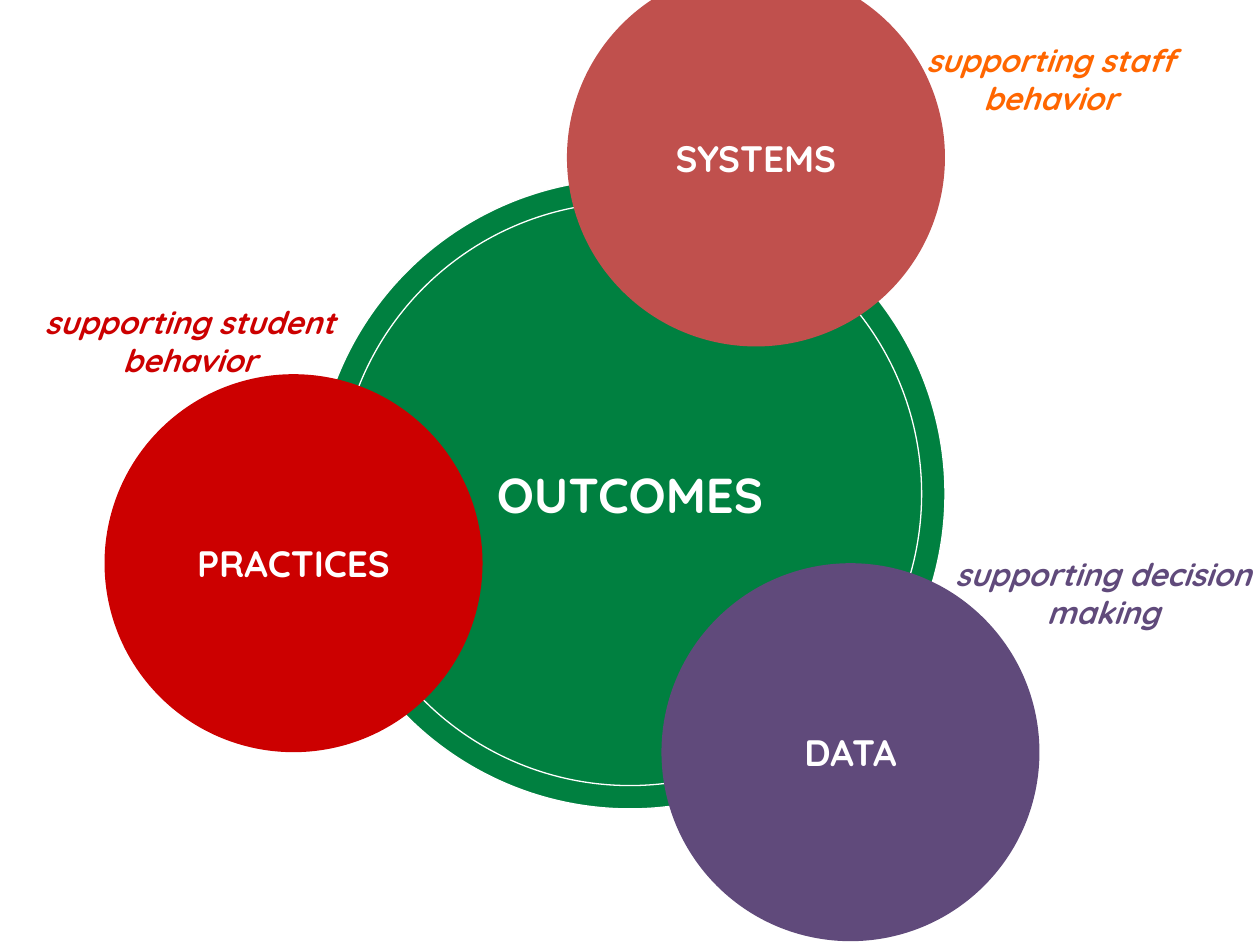
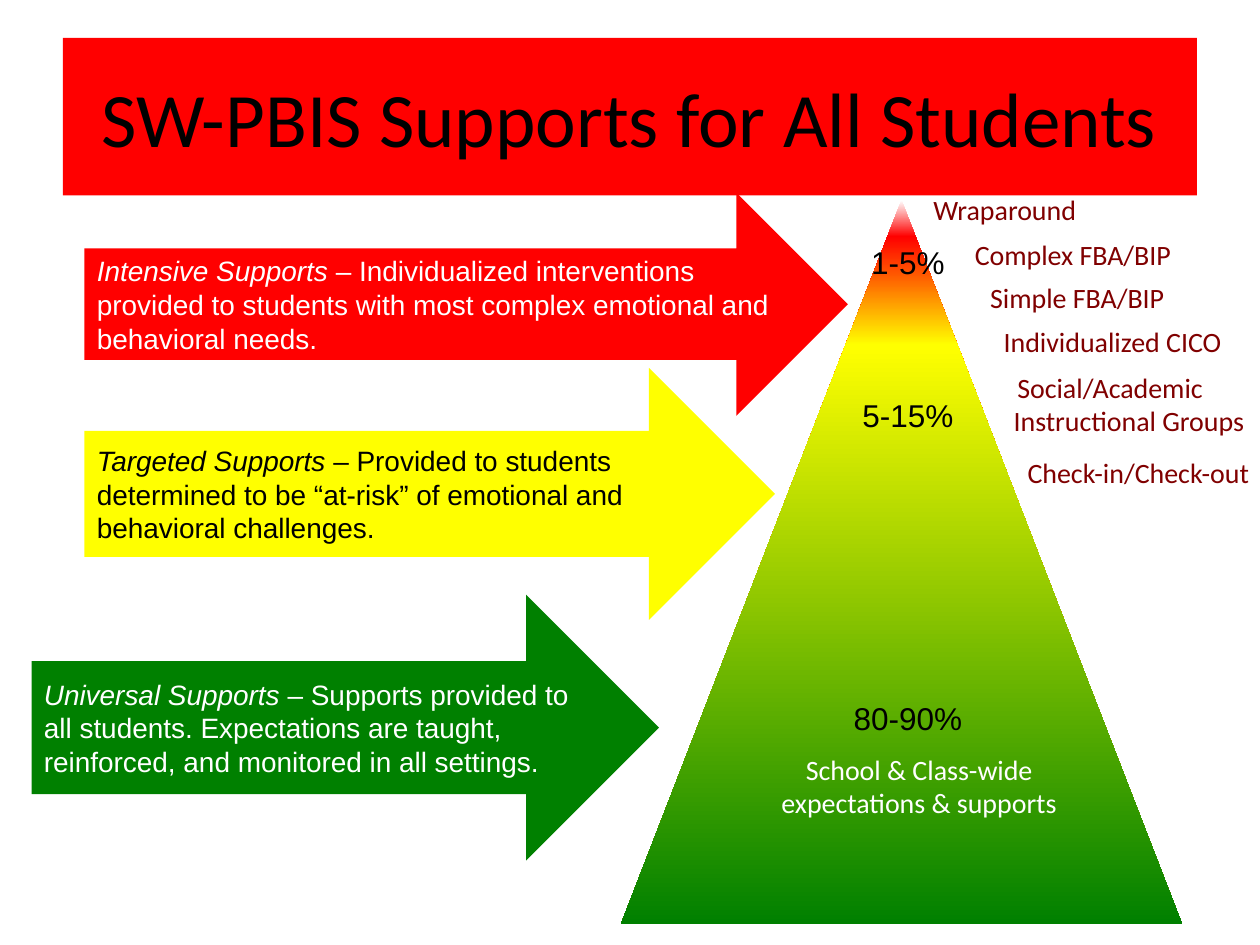
from dataclasses import dataclass

from lxml import etree
from pptx import Presentation
from pptx import util as u
from pptx.dml.color import RGBColor
from pptx.enum import shapes, text
from pptx.oxml.ns import qn


@dataclass(frozen=True)
class Theme:
    white: str = "FFFFFF"
    black: str = "000000"
    red: str = "FF0000"
    yellow: str = "FFFF00"
    green: str = "008000"
    maroon: str = "800000"
    outcomes: str = "008040"
    data: str = "604A7B"
    systems: str = "C0504D"
    staff: str = "FF6600"
    practices: str = "CC0000"
    circle_font: str = "Quicksand"
    tier_font: str = "Arial"
    label_font: str = "Calibri"
    title_size: int = 44
    core_size: int = 28
    circle_size: int = 21
    note_size: int = 18
    label_size: int = 16


THEME = Theme()
SHAPE = shapes.MSO_SHAPE
CENTER, LEFT = text.PP_ALIGN.CENTER, text.PP_ALIGN.LEFT
MIDDLE, TOP = text.MSO_ANCHOR.MIDDLE, text.MSO_ANCHOR.TOP


# Text helpers
def style(font, size, name, color, **flags):
    values = {"size": u.Pt(size), "name": name, **flags}
    for key, value in values.items():
        setattr(font, key, value)
    font.color.rgb = RGBColor.from_string(color)


def add_span(para, words, size, name, color, **flags):
    span = para.add_run()
    span.text = words
    style(span.font, size, name, color, **flags)


def set_frame(frame, anchor=MIDDLE, wrap=True, inset=None):
    values = {"word_wrap": wrap, "vertical_anchor": anchor}
    if inset is not None:
        for side in ("left", "top", "right", "bottom"):
            values[f"margin_{side}"] = u.Inches(inset)
    for key, value in values.items():
        setattr(frame, key, value)


def add_label(page, at, lines, size, name, color, anchor=TOP, wrap=True, gaps=(), **flags):
    """Add a centred text box; gaps holds the space before each later line."""
    box = page.shapes.add_textbox(*map(u.Inches, at))
    frame = box.text_frame
    set_frame(frame, anchor, wrap)
    for index, line in enumerate(lines):
        para = frame.add_paragraph() if index else frame.paragraphs[0]
        para.alignment = CENTER
        if index and gaps:
            para.space_before = u.Pt(gaps[index - 1])
        add_span(para, line, size, name, color, **flags)
    return box


# Shape helpers
def add_figure(parent, kind, at, fill=None, line=None):
    figure = parent.shapes.add_shape(kind, *map(u.Inches, at))
    figure.shadow.inherit = False
    if fill:
        figure.fill.solid()
        figure.fill.fore_color.rgb = RGBColor.from_string(fill)
    else:
        figure.fill.background()
    if line:
        figure.line.color.rgb = RGBColor.from_string(line)
        figure.line.width = u.Pt(0.75)
    else:
        figure.line.fill.background()
    return figure


def add_circle(parent, center, diameter, fill, words="", size=0, line=None, inset=None):
    left, top = (c - diameter / 2 for c in center)
    circle = add_figure(parent, SHAPE.OVAL, (left, top, diameter, diameter), fill, line)
    if words:
        set_frame(circle.text_frame, inset=inset)
        para = circle.text_frame.paragraphs[0]
        para.alignment = CENTER
        add_span(para, words, size, THEME.circle_font, THEME.white, bold=True)


def add_title(page, words):
    band = add_figure(page, SHAPE.RECTANGLE, (0.5, 0.3, 9, 1.25), THEME.red)
    set_frame(band.text_frame)
    para = band.text_frame.paragraphs[0]
    para.alignment = CENTER
    add_span(para, words, THEME.title_size, THEME.label_font, THEME.black)


def add_tier_arrow(page, at, fill, color, tier, description):
    arrow = add_figure(page, SHAPE.RIGHT_ARROW, at, fill)
    set_frame(arrow.text_frame)
    para = arrow.text_frame.paragraphs[0]
    para.alignment = LEFT
    for words, italic in ((f"{tier} ", True), (f"– {description}", False)):
        add_span(para, words, THEME.label_size, THEME.tier_font, color, italic=italic)


def add_pyramid(page, at, stops):
    pyramid = add_figure(page, SHAPE.ISOSCELES_TRIANGLE, at)
    pyramid.fill.gradient()
    pyramid.fill.gradient_angle = 270
    stop_list = pyramid._element.spPr.find(f".//{qn('a:gsLst')}")
    for old_stop in list(stop_list):
        stop_list.remove(old_stop)
    for percent, color in stops:
        stop = etree.SubElement(stop_list, qn("a:gs"), pos=str(percent * 1000))
        etree.SubElement(stop, qn("a:srgbClr"), val=color)


# Slides
def build_outcomes(page):
    core = page.shapes.add_group_shape()
    center = (5, 3.92)
    add_circle(core, center, 5, THEME.outcomes, "OUTCOMES", THEME.core_size, THEME.white)
    add_circle(core, center, 4.63, None, line=THEME.white)

    # Surrounding circles
    for words, middle, fill in (
        ("DATA", (6.75, 5.97), THEME.data),
        ("SYSTEMS", (6, 1.25), THEME.systems),
        ("PRACTICES", (2.33, 4.47), THEME.practices),
    ):
        add_circle(page, middle, 3, fill, words, THEME.circle_size, inset=0)

    # What each circle supports
    for target, left, top, color in (
        ("student behavior", -0.08, 2.33, THEME.practices),
        ("staff behavior", 6.75, 0.25, THEME.staff),
        ("decision making", 7.17, 4.33, THEME.data),
    ):
        add_label(page, (left, top, 3.17, 0.75), [f"supporting {target}"], THEME.note_size,
                  THEME.circle_font, color, MIDDLE, bold=True, italic=True)


def build_supports(page):
    add_title(page, "SW-PBIS Supports for All Students")

    # Pyramid and its shares of students
    add_pyramid(page, (4.93, 1.59, 4.45, 5.74),
                ((0, THEME.white), (5, THEME.red), (20, THEME.yellow), (100, THEME.green)))
    add_label(page, (6.58, 1.88, 1.25, 4.04), ["1-5%", "5-15%", "80-90%"], THEME.note_size,
              THEME.tier_font, THEME.black, gaps=(65.6, 152))

    # Tiers of support
    add_tier_arrow(page, (0.67, 2.92, 5.48, 2), THEME.yellow, THEME.black, "Targeted Supports",
                   "Provided to students determined to be “at-risk” of emotional and "
                   "behavioral challenges.")
    add_tier_arrow(page, (0.67, 1.53, 6.06, 1.77), THEME.red, THEME.white, "Intensive Supports",
                   "Individualized interventions provided to students with most complex "
                   "emotional and behavioral needs.")
    add_tier_arrow(page, (0.25, 4.72, 4.98, 2.11), THEME.green, THEME.white, "Universal Supports",
                   "Supports provided to all students. Expectations are taught, reinforced, "
                   "and monitored in all settings.")

    # Interventions along the pyramid's edge
    label = (THEME.label_size, THEME.label_font)
    for words, left, top, width, wrap in (
        ("Check-in/Check-out", 7.66, 3.57, 2.75, True),
        ("Individualized CICO", 7.58, 2.53, 2.5, True),
        ("Simple FBA/BIP", 7.75, 2.18, 1.6, False),
        ("Complex FBA/BIP", 7.59, 1.84, 1.85, False),
        ("Wraparound", 7.29, 1.48, 1.37, False),
    ):
        add_label(page, (left, top, width, 0.37), [words], *label, THEME.maroon, wrap=wrap)
    groups = add_label(page, (7.6, 2.89, 2.42, 0.64),
                       ["Social/Academic", "Instructional Groups"], *label, THEME.maroon)
    second_line = groups.text_frame.paragraphs[1]
    second_line._p.get_or_add_pPr().set("marL", str(u.Inches(0.3)))
    add_label(page, (5.92, 5.92, 2.75, 0.64), ["School & Class-wide expectations & supports"],
              *label, THEME.white)


def main():
    deck = Presentation()
    deck.slide_width, deck.slide_height = u.Inches(10), u.Inches(7.5)
    for build in (build_outcomes, build_supports):
        build(deck.slides.add_slide(deck.slide_layouts[6]))
    deck.save("out.pptx")


if __name__ == "__main__":
    main()
